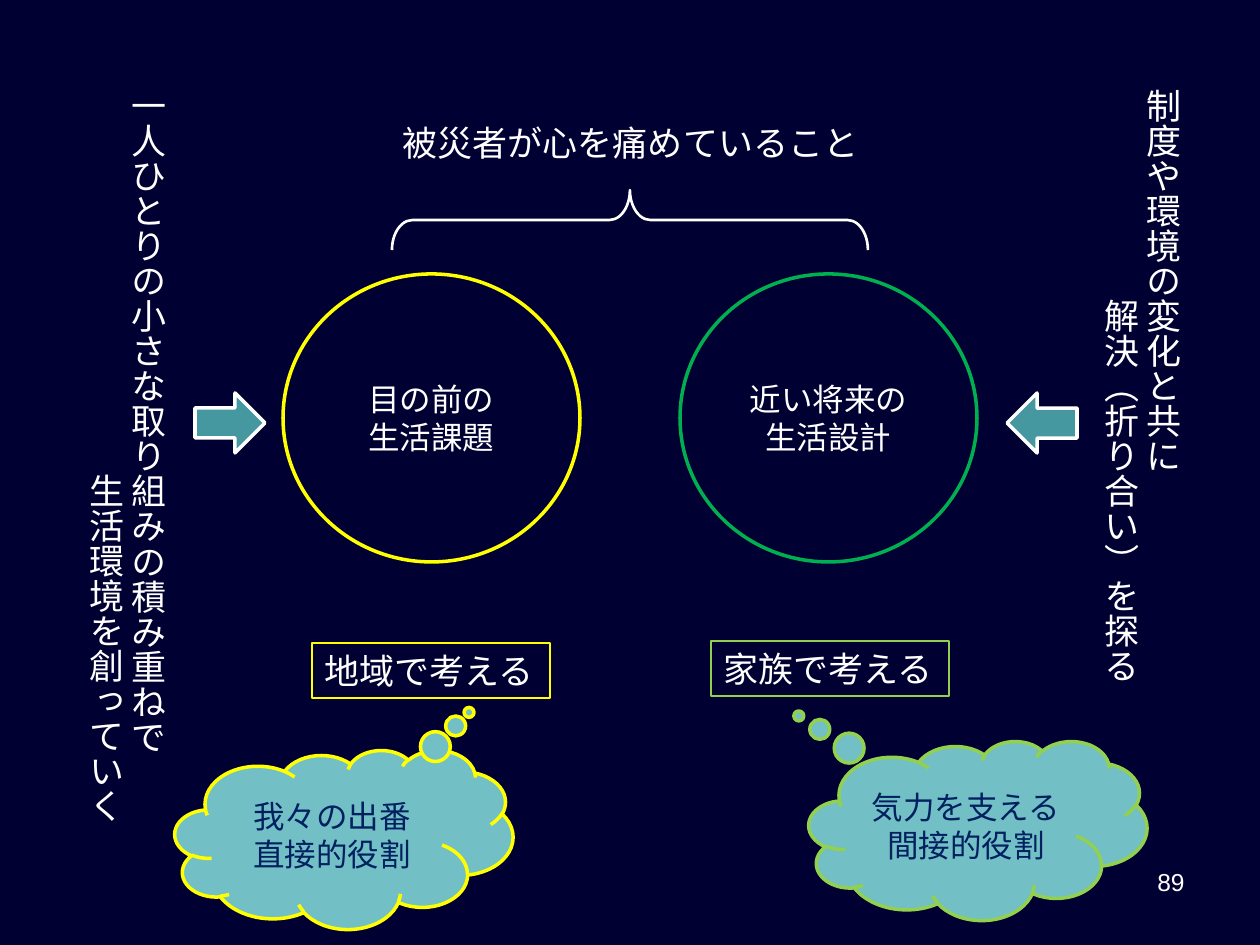
from dataclasses import dataclass

from pptx import Presentation
from pptx.dml.color import RGBColor
from pptx.enum.shapes import MSO_SHAPE
from pptx.enum.text import MSO_ANCHOR, MSO_AUTO_SIZE, PP_ALIGN
from pptx.oxml.ns import qn
from pptx.util import Emu, Pt

EMU_PER_PX = 914400 / 126
JAPANESE = "Noto Sans CJK JP"
COLORS = {
    "night": "000032",
    "white": "FFFFFF",
    "yellow": "FFFF00",
    "green": "00B050",
    "lime": "92D050",
    "teal": "4597A0",
    "aqua": "72BFC5",
    "navy": "002060",
}


@dataclass(frozen=True)
class Box:
    left: int
    top: int
    width: int
    height: int

    def lengths(self) -> list[Emu]:
        return [px(value) for value in (self.left, self.top, self.width, self.height)]


@dataclass(frozen=True)
class Figure:
    kind: MSO_SHAPE
    box: Box
    line: str
    line_width: float = 2
    fill: str | None = None
    rotation: int = 0
    adjustments: tuple[float, ...] = ()
    lines: tuple[str, ...] = ()
    size: int = 18
    color: str = "white"
    font: str = "Arial"
    align: PP_ALIGN = PP_ALIGN.CENTER
    wrap: bool = True


@dataclass(frozen=True)
class Column:
    box: Box
    lines: tuple[str, str]
    indent_characters: int


def px(value: float) -> Emu:
    return Emu(round(value * EMU_PER_PX))


def color_of(name: str) -> RGBColor:
    return RGBColor.from_string(COLORS[name])


def write_text(shape, lines, *, size=20, color="white", font=JAPANESE,
               align=PP_ALIGN.LEFT, anchor=MSO_ANCHOR.TOP, wrap=False) -> None:
    frame = shape.text_frame
    frame.auto_size = MSO_AUTO_SIZE.NONE
    frame.word_wrap = wrap
    frame.vertical_anchor = anchor
    for index, text in enumerate(lines):
        para = frame.add_paragraph() if index else frame.paragraphs[0]
        para.alignment = align
        span = para.add_run()
        span.text = text
        span.font.size = Pt(size)
        span.font.name = font
        span.font.color.rgb = color_of(color)
        east_asian = span.font._element.makeelement(qn("a:ea"), {"typeface": JAPANESE})
        span.font._element.find(qn("a:latin")).addnext(east_asian)


def draw_figure(page, figure: Figure) -> None:
    shape = page.shapes.add_shape(figure.kind, *figure.box.lengths())
    shape.shadow.inherit = False
    shape.rotation = figure.rotation
    for index, value in enumerate(figure.adjustments):
        shape.adjustments[index] = value
    if figure.fill:
        shape.fill.solid()
        shape.fill.fore_color.rgb = color_of(figure.fill)
    else:
        shape.fill.background()
    shape.line.color.rgb = color_of(figure.line)
    shape.line.width = Pt(figure.line_width)
    if figure.lines:
        write_text(shape, figure.lines, size=figure.size, color=figure.color,
                   font=figure.font, align=figure.align,
                   anchor=MSO_ANCHOR.MIDDLE, wrap=figure.wrap)


def draw_column(page, column: Column) -> None:
    shape = page.shapes.add_textbox(*column.box.lengths())
    write_text(shape, column.lines)
    shape.text_frame._txBody.bodyPr.set("vert", "eaVert")
    properties = shape.text_frame.paragraphs[1]._p.get_or_add_pPr()
    properties.set("marL", str(Pt(20 * column.indent_characters)))
    properties.set("indent", "0")


def circle(left: int, line: str, *lines: str) -> Figure:
    return Figure(MSO_SHAPE.OVAL, Box(left, 274, 297, 288), line, lines=lines)


def arrow(left: int, rotation: int) -> Figure:
    return Figure(MSO_SHAPE.RIGHT_ARROW, Box(left, 393, 70, 60), "white",
                  fill="teal", rotation=rotation)


def label(left: int, top: int, line: str, text: str) -> Figure:
    return Figure(MSO_SHAPE.RECTANGLE, Box(left, top, 238, 55), line, 0.75,
                  lines=(text,), size=20, font=JAPANESE,
                  align=PP_ALIGN.LEFT, wrap=False)


def cloud(left: int, top: int, line: str, tail: tuple[float, float], *lines: str) -> Figure:
    return Figure(MSO_SHAPE.CLOUD_CALLOUT, Box(left, top, 338, 179), line,
                  fill="aqua", adjustments=tail, lines=lines, color="navy")


FIGURES = [
    circle(283, "yellow", "目の前の", "生活課題"),
    circle(680, "green", "近い将来の生活設計"),
    arrow(195, 0),
    arrow(1007, 180),
    Figure(MSO_SHAPE.RIGHT_BRACE, Box(600, -18, 60, 476), "white", 1.5,
           rotation=270, adjustments=(0.34, 0.5)),
    label(711, 641, "lime", "家族で考える"),
    label(312, 643, "yellow", "地域で考える"),
    cloud(175, 750, "yellow", (0.37, -0.71), "我々の出番", "直接的役割"),
    cloud(809, 741, "lime", (-0.53, -0.64), "気力を支える", "間接的役割"),
]
COLUMNS = [
    Column(Box(1079, 76, 111, 614), ("制度や環境の変化と共に", "解決（折り合い）を探る"), 6),
    Column(Box(64, 76, 111, 755),
           ("一人ひとりの小さな取り組みの積み重ねで", "生活環境を創っていく"), 11),
]


def main() -> None:
    deck = Presentation()
    deck.slide_width, deck.slide_height = px(1260), px(945)
    page = deck.slides.add_slide(deck.slide_layouts[5])
    page.background.fill.solid()
    page.background.fill.fore_color.rgb = color_of("night")

    title = page.shapes.title
    title.left, title.top, title.width, title.height = Box(390, 115, 485, 55).lengths()
    write_text(title, ["被災者が心を痛めていること"])

    for figure in FIGURES:
        draw_figure(page, figure)
    for column in COLUMNS:
        draw_column(page, column)

    number = page.shapes.add_textbox(*Box(903, 861, 294, 66).lengths())
    write_text(number, ["89"], size=14, font="Arial", align=PP_ALIGN.RIGHT)
    deck.save("out.pptx")


if __name__ == "__main__":
    main()
